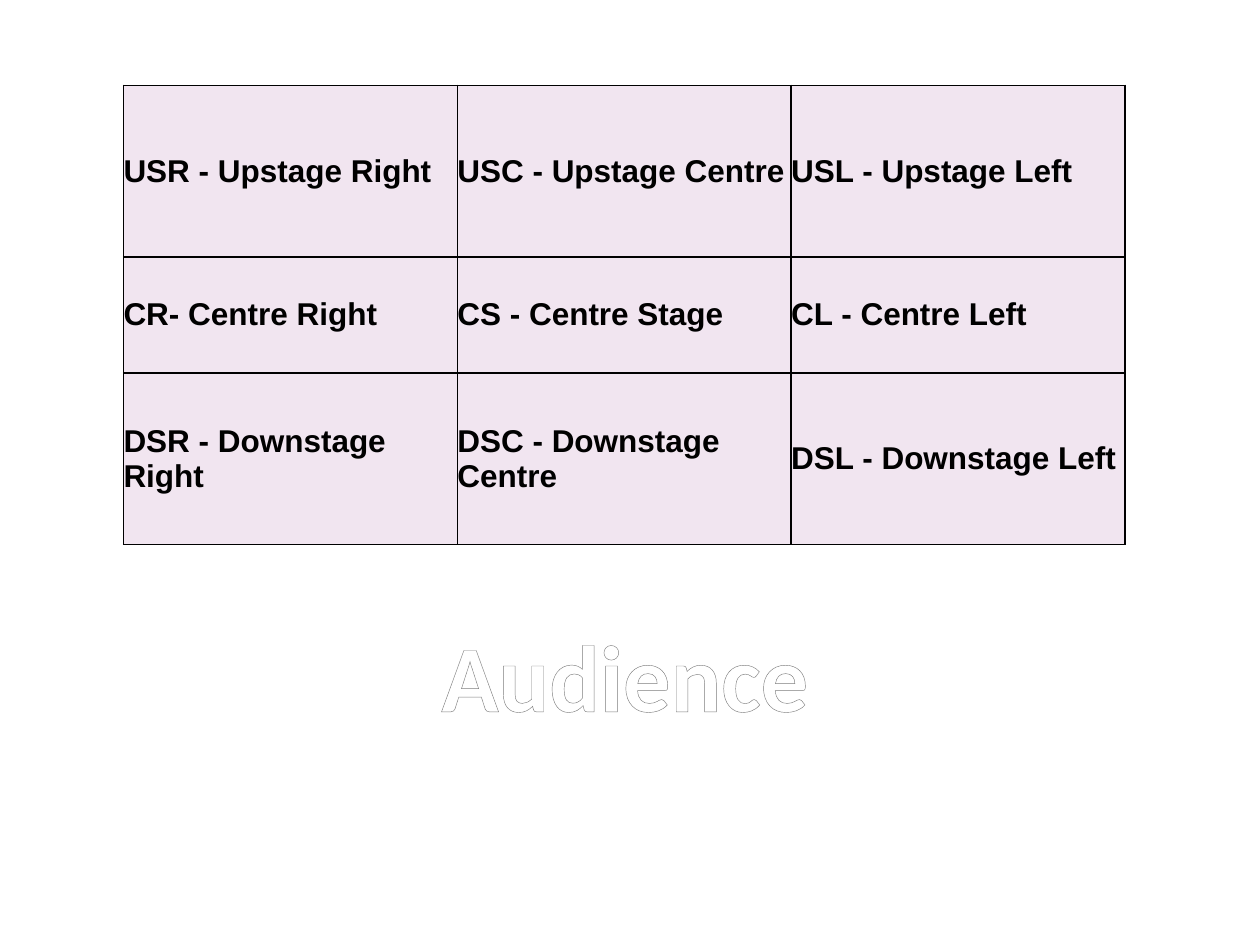
from dataclasses import dataclass

from lxml.etree import SubElement
from pptx import Presentation
from pptx.dml.color import RGBColor
from pptx.enum.text import MSO_ANCHOR as Anchor, MSO_AUTO_SIZE as AutoSize, PP_ALIGN as Align
from pptx.oxml import parse_xml
from pptx.oxml.ns import nsdecls, qn
from pptx.util import Cm, Pt

COLOURS = {
    "ink": "000000",
    "stage": "F1E5F0",
    "shine": "FFFFFF",
    "shade": "7F7F7F",
    "outline": "7D7D7D",
}


@dataclass
class StageRow:
    height: float
    areas: tuple[str, str, str]


STAGE_ROWS = [
    StageRow(3.46, ("USR - Upstage Right", "USC - Upstage Centre", "USL - Upstage Left")),
    StageRow(2.34, ("CR- Centre Right", "CS - Centre Stage", "CL - Centre Left")),
    StageRow(3.46, ("DSR - Downstage Right", "DSC - Downstage Centre", "DSL - Downstage Left")),
]
COLUMN_WIDTH = 6.73
AUDIENCE_STOPS = [(0, "shine"), (9, "shine"), (50, "shade"), (79, "shine"), (100, "shine")]


def write(frame, text: str, *, font: str, size: float, bold: bool = True,
          colour: str = "ink", align=Align.LEFT):
    """Put one formatted paragraph in a text frame and return its run."""
    para = frame.paragraphs[0]
    para.alignment = align
    span = para.add_run()
    span.text = text
    span.font.name = font
    span.font.size = Pt(size)
    span.font.bold = bold
    span.font.color.rgb = RGBColor.from_string(COLOURS[colour])
    return span


def add_borders(cell, colour: str, width: float) -> None:
    properties = cell._tc.get_or_add_tcPr()
    for index, side in enumerate(("lnL", "lnR", "lnT", "lnB")):
        properties.insert(index, parse_xml(
            f'<a:{side} {nsdecls("a")} w="{Pt(width)}"><a:solidFill>'
            f'<a:srgbClr val="{COLOURS[colour]}"/></a:solidFill></a:{side}>'))


def draw_stage(page, left: float, top: float) -> None:
    columns = len(STAGE_ROWS[0].areas)
    height = sum(row.height for row in STAGE_ROWS)
    table = page.shapes.add_table(len(STAGE_ROWS), columns, Cm(left), Cm(top),
                                  Cm(columns * COLUMN_WIDTH), Cm(height)).table
    for column in table.columns:
        column.width = Cm(COLUMN_WIDTH)
    for row, stage_row in zip(table.rows, STAGE_ROWS):
        row.height = Cm(stage_row.height)
        for cell, area in zip(row.cells, stage_row.areas):
            cell.fill.solid()
            cell.fill.fore_color.rgb = RGBColor.from_string(COLOURS["stage"])
            cell.margin_left = cell.margin_right = cell.margin_top = cell.margin_bottom = 0
            cell.vertical_anchor = Anchor.MIDDLE
            add_borders(cell, "ink", 1)
            write(cell.text_frame, area, font="Arial", size=18)


def add_gradient_outline(span) -> None:
    """Give the letters a vertical gradient and a thin outline."""
    properties = span.font._element
    gradient = parse_xml(f'<a:gradFill {nsdecls("a")}><a:gsLst/><a:lin ang="5400000"/></a:gradFill>')
    for position, colour in AUDIENCE_STOPS:
        stop = SubElement(gradient[0], qn("a:gs"), pos=str(position * 1000))
        SubElement(stop, qn("a:srgbClr"), val=COLOURS[colour])
    properties.replace(properties.find(qn("a:solidFill")), gradient)
    properties.insert(0, parse_xml(
        f'<a:ln {nsdecls("a")} w="{Pt(0.83)}"><a:solidFill>'
        f'<a:srgbClr val="{COLOURS["outline"]}"/></a:solidFill></a:ln>'))


def draw_audience(page) -> None:
    box = page.shapes.add_textbox(Cm(8.6), Cm(12.32), Cm(8), Cm(2.57))
    box.text_frame.word_wrap = False
    box.text_frame.auto_size = AutoSize.SHAPE_TO_FIT_TEXT
    span = write(box.text_frame, "Audience", font="Calibri", size=54, align=Align.CENTER)
    add_gradient_outline(span)


def main() -> None:
    deck = Presentation()
    deck.slide_width, deck.slide_height = Cm(25.4), Cm(19.05)
    page = deck.slides.add_slide(deck.slide_layouts[6])

    # Stage areas, seen from the seats
    draw_stage(page, left=2.49, top=1.72)

    # Audience below the stage
    draw_audience(page)

    deck.save("out.pptx")


if __name__ == "__main__":
    main()
